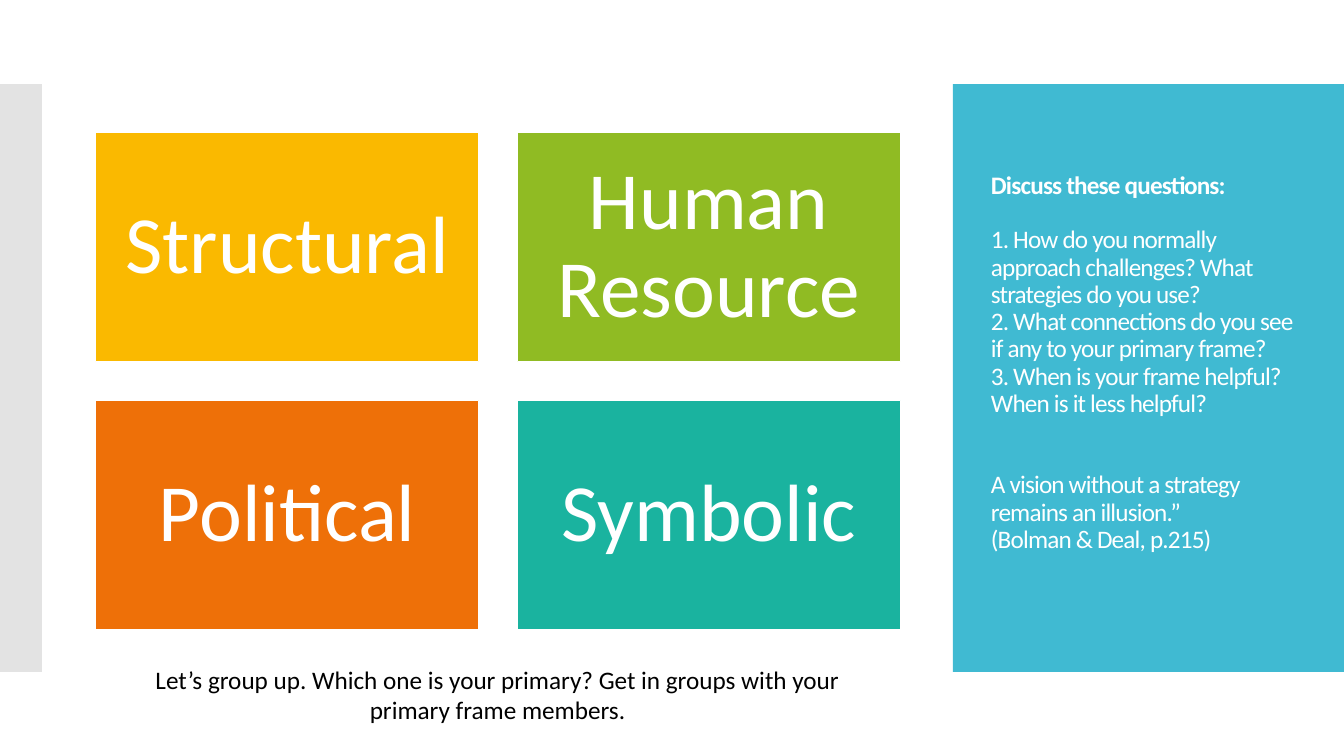
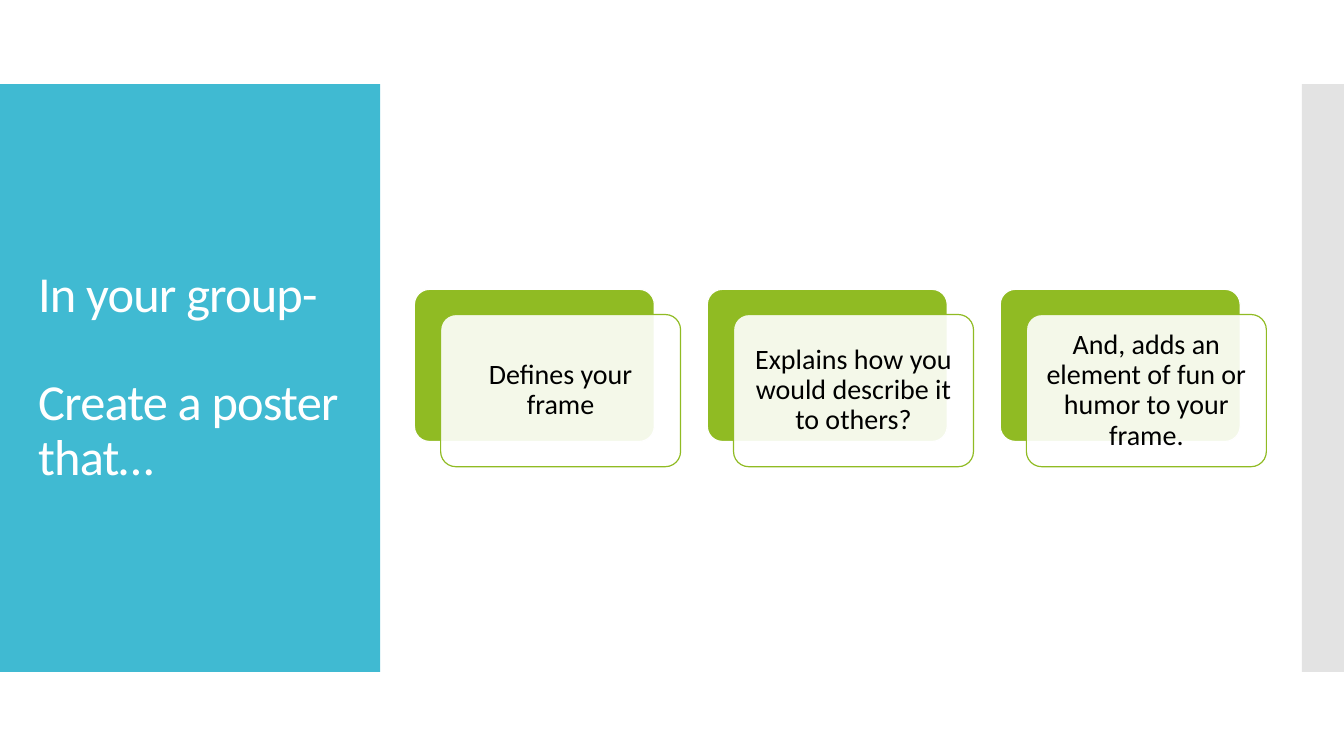
from lxml import etree
from pptx import Presentation
from pptx.dml.color import RGBColor
from pptx.enum.shapes import MSO_SHAPE
from pptx.enum.text import MSO_ANCHOR, PP_ALIGN
from pptx.oxml.ns import qn
from pptx.util import Inches, Pt

RECT, ROUND = MSO_SHAPE.RECTANGLE, MSO_SHAPE.ROUNDED_RECTANGLE
LEFT, CENTER = PP_ALIGN.LEFT, PP_ALIGN.CENTER
TOP, MIDDLE = MSO_ANCHOR.TOP, MSO_ANCHOR.MIDDLE

WHITE = RGBColor(0xFF, 0xFF, 0xFF)
BLACK = RGBColor(0x00, 0x00, 0x00)
BLUE = RGBColor(0x40, 0xBA, 0xD2)
GREY = RGBColor(0xC8, 0xC8, 0xC8)
YELLOW = RGBColor(0xFA, 0xB9, 0x00)
GREEN = RGBColor(0x90, 0xBB, 0x23)
ORANGE = RGBColor(0xEE, 0x70, 0x08)
TEAL = RGBColor(0x1A, 0xB3, 0x9F)

FONT = "Calibri"
W, H = 13.33, 7.5
BAND_TOP, BAND_H = H / 9, H * 7 / 9
STRIP_W = W / 32
LINE_W = 0.85

# (text, blank lines before, bold)
QUESTIONS = [
    ("Discuss these questions:", 0, True),
    ("1. How do you normally approach challenges? What strategies do you use?", 1, False),
    ("2. What connections do you see if any to your primary frame?", 0, False),
    ("3. When is your frame helpful? When is it less helpful?", 0, False),
    ("A vision without a strategy remains an illusion.”", 2, False),
    ("(Bolman & Deal, p.215)", 0, False),
]
FRAMES = [("Structural", YELLOW), ("Human Resource", GREEN),
          ("Political", ORANGE), ("Symbolic", TEAL)]
PROMPT = ("Let’s group up. Which one is your primary? "
          "Get in groups with your primary frame members.")
TASK = [("In your group-", 0, False), ("Create a poster that…", 1, False)]
STEPS = ["Defines your frame",
         "Explains how you would describe it to others?",
         "And, adds an element of fun or humor to your frame."]


def add_box(slide, kind, x, y, w, h, fill, line=None, opacity=None):
    sp = slide.shapes.add_shape(kind, Inches(x), Inches(y), Inches(w), Inches(h))
    sp.shadow.inherit = False
    sp.fill.solid()
    sp.fill.fore_color.rgb = fill
    if opacity is not None:
        color = sp.fill._xPr.find(qn("a:solidFill"))[0]
        etree.SubElement(color, qn("a:alpha")).set("val", str(opacity * 1000))
    if line is None:
        sp.line.fill.background()
    else:
        sp.line.color.rgb = line
        sp.line.width = Pt(LINE_W)
    if kind == ROUND:
        sp.adjustments[0] = 0.1
    return sp


def write(sp, items, size, color, align=CENTER, anchor=MIDDLE, inset=None,
          leading=0.9, tracking=None):
    tf = sp.text_frame
    tf.word_wrap = True
    tf.vertical_anchor = anchor
    if inset is not None:
        tf.margin_left = tf.margin_right = Inches(inset)
        tf.margin_top = tf.margin_bottom = Inches(inset)
    tf.text = "\n".join(text for text, _, _ in items)
    for p, (_, gap, bold) in zip(tf.paragraphs, items):
        p.alignment = align
        p.line_spacing = leading
        p.space_before = Pt(round(gap * size * 1.08, 1))
        for r in p.runs:
            r.font.name, r.font.size, r.font.bold = FONT, Pt(size), bold
            r.font.color.rgb = color
            if tracking is not None:
                r.font._element.set("spc", str(tracking))


def add_text(slide, x, y, w, h):
    return slide.shapes.add_textbox(Inches(x), Inches(y), Inches(w), Inches(h))


def add_frame_slide(prs, panel_x, panel_w, strip_x, title, size, lift=0):
    slide = prs.slides.add_slide(prs.slide_layouts[6])
    add_box(slide, RECT, panel_x, BAND_TOP, panel_w, BAND_H, BLUE)
    add_box(slide, RECT, strip_x, BAND_TOP, STRIP_W, BAND_H, GREY, opacity=50)
    sp = add_text(slide, panel_x + 0.28, 1.23 - lift, 3.22, 5.03)
    write(sp, title, size, WHITE, LEFT, tracking=-60)
    return slide


def build_frames(prs):
    slide = add_frame_slide(prs, W - 3.88, 3.88, 0, QUESTIONS, 18, lift=0.14)
    w, h, gap = 3.8, 2.28, 0.38
    for i, (name, color) in enumerate(FRAMES):
        row, col = divmod(i, 2)
        sp = add_box(slide, RECT, 0.95 + col * (w + gap), 1.31 + row * (h + gap),
                     w, h, color, WHITE)
        write(sp, [(name, 0, False)], 58, WHITE, inset=0.24)
    sp = add_text(slide, 1.13, 6.54, 7.61, 0.71)
    write(sp, [(PROMPT, 0, False)], 18, BLACK, anchor=TOP, leading=1.0)


def build_poster(prs):
    slide = add_frame_slide(prs, 0, 3.77, W - STRIP_W, TASK, 36)
    w, h, pitch = 2.38, 1.51, 2.905
    for i, step in enumerate(STEPS):
        x, y = 4.11 + i * pitch, 2.87
        add_box(slide, ROUND, x, y, w, h, GREEN, WHITE)
        card = add_box(slide, ROUND, x + 0.26, y + 0.25, w, h, WHITE, GREEN, 90)
        write(card, [(step, 0, False)], 20, BLACK, inset=0.08)


def main():
    prs = Presentation()
    prs.slide_width, prs.slide_height = Inches(W), Inches(H)
    build_frames(prs)
    build_poster(prs)
    prs.save("out.pptx")


if __name__ == "__main__":
    main()
